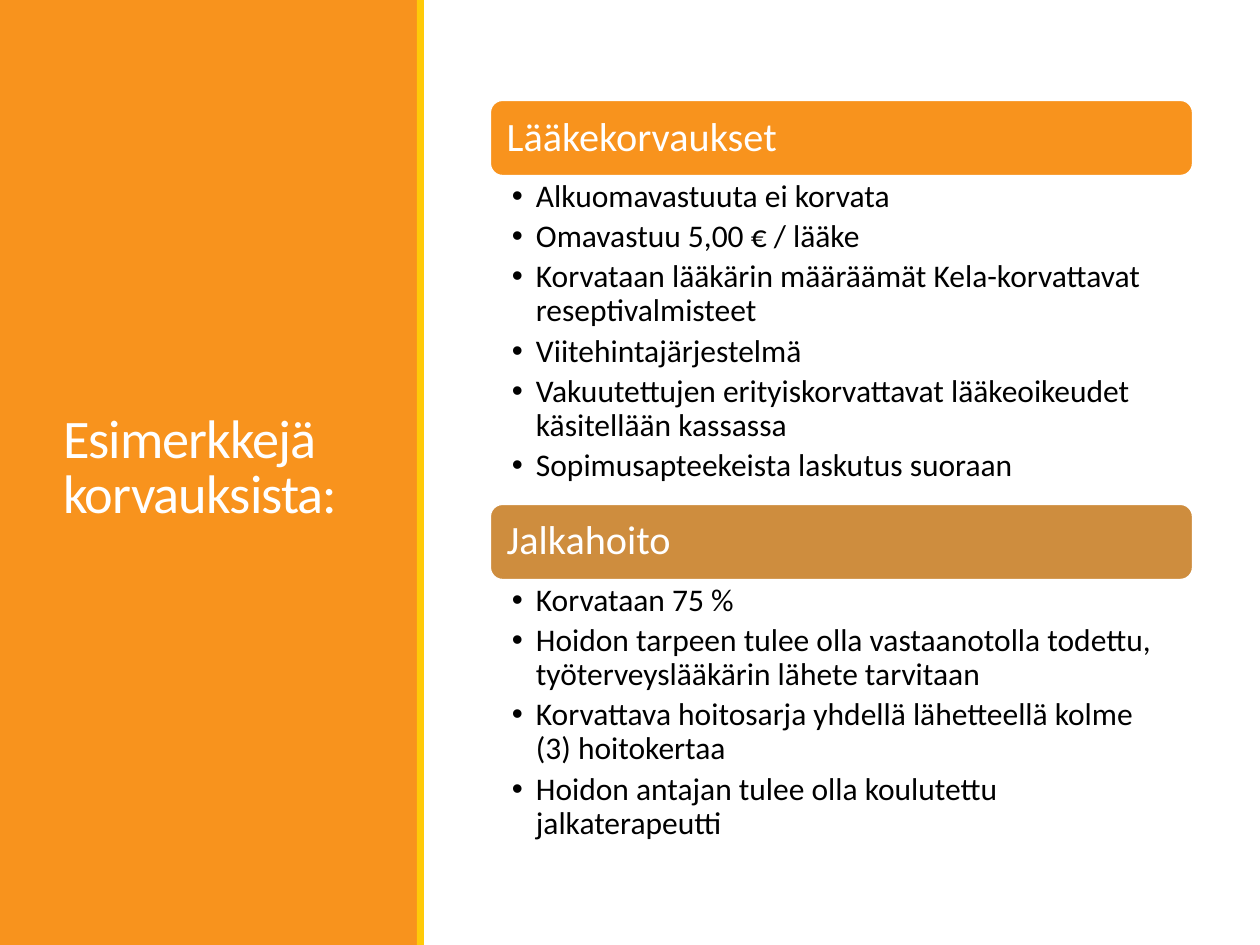
from dataclasses import dataclass

from lxml import etree
from pptx import Presentation
from pptx import util as u
from pptx.dml.color import RGBColor
from pptx.enum import shapes, text
from pptx.oxml import ns

EMU_PER_INCH = 914400
PX_PER_INCH = 126
FONT = "Calibri"
ORANGE = RGBColor(0xF8, 0x93, 0x1D)
YELLOW = RGBColor(0xFF, 0xCA, 0x08)
BRONZE = RGBColor(0xCE, 0x8D, 0x3E)
WHITE = RGBColor(0xFF, 0xFF, 0xFF)
BLACK = RGBColor(0x00, 0x00, 0x00)

SECTION_LEFT = 490
SECTION_WIDTH = 703
HEADING_HEIGHT = 76
BULLET_INDENT = 24


@dataclass(frozen=True)
class Area:
    left: int
    top: int
    width: int
    height: int


@dataclass(frozen=True)
class Section:
    heading: str
    color: RGBColor
    top: int
    list_height: int
    items: tuple[str, ...]


SECTIONS = (
    Section("Lääkekorvaukset", ORANGE, 100, 328, (
        "Alkuomavastuuta ei korvata",
        "Omavastuu 5,00 € / lääke",
        "Korvataan lääkärin määräämät Kela-korvattavat reseptivalmisteet",
        "Viitehintajärjestelmä",
        "Vakuutettujen erityiskorvattavat lääkeoikeudet käsitellään kassassa",
        "Sopimusapteekeista laskutus suoraan",
    )),
    Section("Jalkahoito", BRONZE, 504, 276, (
        "Korvataan 75 %",
        "Hoidon tarpeen tulee olla vastaanotolla todettu, työterveyslääkärin lähete tarvitaan",
        "Korvattava hoitosarja yhdellä lähetteellä kolme (3) hoitokertaa",
        "Hoidon antajan tulee olla koulutettu jalkaterapeutti",
    )),
)


def px(length: int) -> u.Emu:
    return u.Emu(round(length * EMU_PER_INCH / PX_PER_INCH))


def bounds(area: Area) -> tuple[u.Emu, ...]:
    return px(area.left), px(area.top), px(area.width), px(area.height)


def add_block(page, kind, area: Area, color: RGBColor):
    block = page.shapes.add_shape(kind, *bounds(area))
    block.shadow.inherit = False
    block.fill.solid()
    block.fill.fore_color.rgb = color
    block.line.fill.background()
    return block


def format_frame(frame, anchor, side: int, edge: int) -> None:
    frame.word_wrap = True
    frame.auto_size = text.MSO_AUTO_SIZE.NONE
    frame.vertical_anchor = anchor
    frame.margin_left = frame.margin_right = px(side)
    frame.margin_top = frame.margin_bottom = px(edge)


def add_span(para, words: str, size: int, color: RGBColor, spacing: float):
    para.alignment = text.PP_ALIGN.LEFT
    para.line_spacing = spacing
    span = para.add_run()
    span.text = words
    span.font.name = FONT
    span.font.size = u.Pt(size)
    span.font.color.rgb = color
    return span


def add_bullet(para) -> None:
    properties = para._p.get_or_add_pPr()
    properties.set("marL", str(px(BULLET_INDENT)))
    properties.set("indent", str(-px(BULLET_INDENT)))
    etree.SubElement(properties, ns.qn("a:buFont")).set("typeface", "Arial")
    etree.SubElement(properties, ns.qn("a:buChar")).set("char", "•")


def add_section(page, section: Section) -> None:
    heading = add_block(
        page, shapes.MSO_SHAPE.ROUNDED_RECTANGLE,
        Area(SECTION_LEFT, section.top, SECTION_WIDTH, HEADING_HEIGHT), section.color)
    heading.line.color.rgb = WHITE
    heading.line.width = u.Pt(1.25)
    format_frame(heading.text_frame, text.MSO_ANCHOR.MIDDLE, 13, 13)
    add_span(heading.text_frame.paragraphs[0], section.heading, 23, WHITE, 0.9)

    box = page.shapes.add_textbox(*bounds(Area(
        SECTION_LEFT, section.top + HEADING_HEIGHT, SECTION_WIDTH, section.list_height)))
    frame = box.text_frame
    format_frame(frame, text.MSO_ANCHOR.TOP, 22, 4)
    for index, item in enumerate(section.items):
        para = frame.add_paragraph() if index else frame.paragraphs[0]
        add_span(para, item, 18, BLACK, 0.9)
        para.level = 1
        para.space_after = u.Pt(3.6)
        add_bullet(para)


def place_title(page, words: str) -> None:
    title = page.shapes.title
    title.left, title.top, title.width, title.height = bounds(Area(50, 72, 319, 795))
    format_frame(title.text_frame, text.MSO_ANCHOR.MIDDLE, 13, 6)
    span = add_span(title.text_frame.paragraphs[0], words, 31, WHITE, 0.85)
    span.font._element.set("spc", "-50")
    page.shapes._spTree.append(title._element)


def main() -> None:
    deck = Presentation()
    deck.slide_width, deck.slide_height = px(1260), px(945)
    page = deck.slides.add_slide(deck.slide_layouts[5])
    add_block(page, shapes.MSO_SHAPE.RECTANGLE, Area(0, 0, 418, 945), ORANGE)
    place_title(page, "Esimerkkejä korvauksista:")
    add_block(page, shapes.MSO_SHAPE.RECTANGLE, Area(417, 0, 7, 945), YELLOW)
    for section in SECTIONS:
        add_section(page, section)
    deck.save("out.pptx")


if __name__ == "__main__":
    main()
